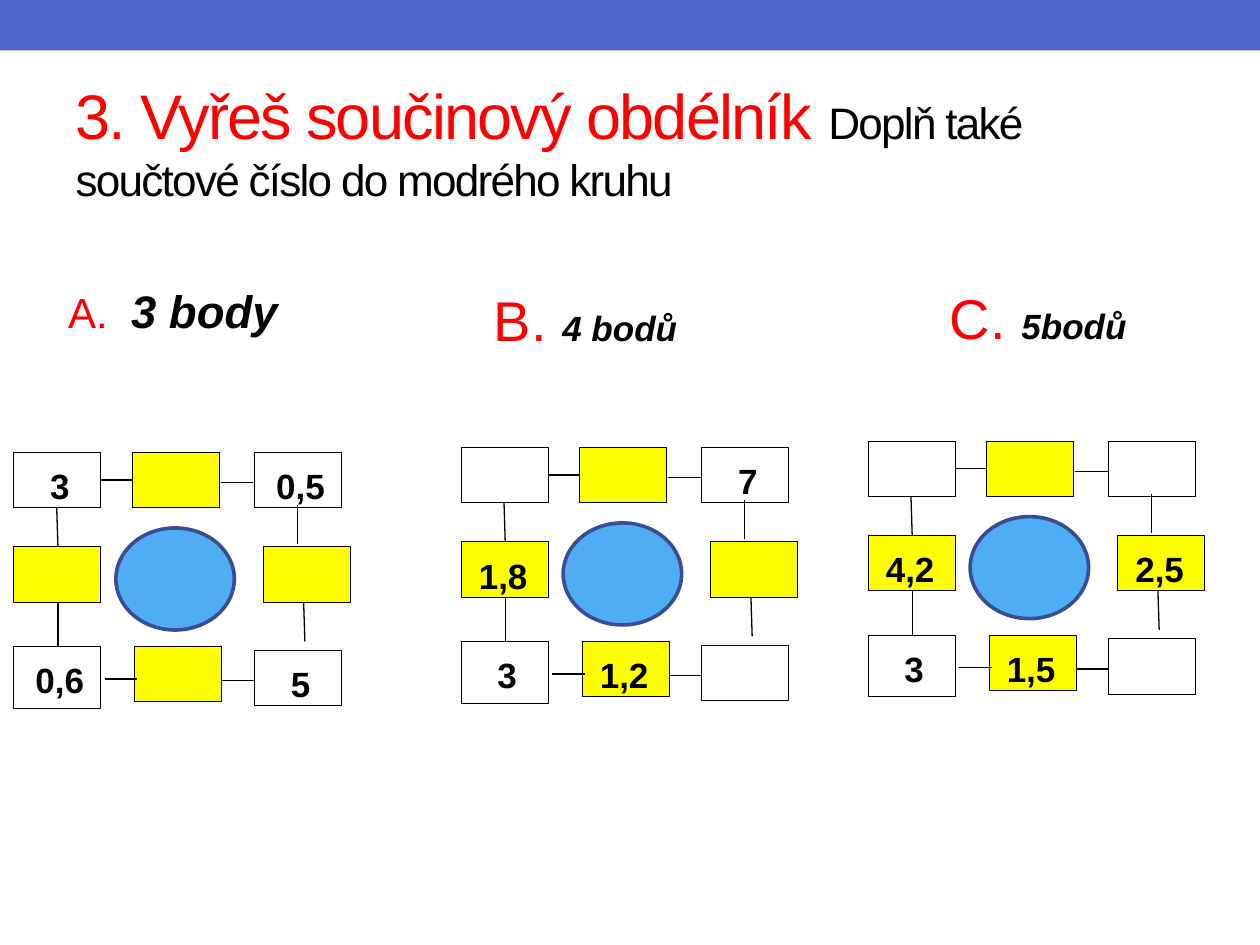
"""Build a worksheet slide with three product-rectangle puzzles."""
from lxml import etree
from pptx import Presentation
from pptx.dml.color import RGBColor
from pptx.enum.shapes import MSO_CONNECTOR, MSO_SHAPE
from pptx.enum.text import MSO_ANCHOR, MSO_AUTO_SIZE, PP_ALIGN
from pptx.oxml.ns import qn
from pptx.util import Inches, Pt

RECT, OVAL = MSO_SHAPE.RECTANGLE, MSO_SHAPE.OVAL
STRAIGHT = MSO_CONNECTOR.STRAIGHT
TOP, MIDDLE = MSO_ANCHOR.TOP, MSO_ANCHOR.MIDDLE
LEFT, CENTER = PP_ALIGN.LEFT, PP_ALIGN.CENTER
NO_FIT = MSO_AUTO_SIZE.NONE
BLACK, WHITE, RED, YELLOW = "000000", "FFFFFF", "FF0000", "FFFF00"
BAND, CIRCLE, CIRCLE_EDGE = "4E67C8", "4FADF3", "3A4C94"
COLUMNS, ROWS = 100, 75

CELL_WIDTH, CELL_HEIGHT = 6.9, 4.4
CELLS = {
    "top left": (0, 0, CELL_HEIGHT, WHITE),
    "top": (9.4, 0, CELL_HEIGHT, YELLOW),
    "right": (19.8, 7.5, CELL_HEIGHT, YELLOW),
    "top right": (19.1, 0, CELL_HEIGHT, WHITE),
    "bottom right": (19.1, 15.7, CELL_HEIGHT, WHITE),
    "left": (0, 7.5, CELL_HEIGHT, YELLOW),
    "bottom left": (0, 15.4, 4.9, WHITE),
    "bottom": (9.6, 15.4, CELL_HEIGHT, YELLOW),
}
LINKS = [
    (6.9, 2.2, 9.4, 2.2), (3.5, 15.4, 3.5, 11.9),
    (16.5, 18.1, 19.1, 18.1), (7.2, 18, 9.8, 18),
    (16.4, 2.4, 19, 2.4), (3.5, 7.5, 3.4, 4.4),
    (23.1, 15, 23, 11.9), (22.5, 7.3, 22.5, 4.2),
]
PUZZLES = [
    (1.1, 35.9, {"top left": "3", "top right": "0,5",
                 "bottom left": "0,6", "bottom right": "5"}),
    (36.6, 35.5, {"top right": "7", "left": "1,8",
                  "bottom left": "3", "bottom": "1,2"}),
    (68.9, 35, {"left": "4,2", "right": "2,5",
                "bottom left": "3", "bottom": "1,5"}),
]


def color(hex_code):
    """Turn a hex string into a colour."""
    return RGBColor.from_string(hex_code)


def assign(target, values):
    """Set each named attribute on the target."""
    for name, value in values.items():
        setattr(target, name, value)


class Worksheet:
    """Hold the style and the current slide, and draw on its grid."""

    font = "Arial"
    cell_paragraph = {"line_spacing": 1.15, "space_after": Pt(10)}
    label_frame = {"word_wrap": True, "auto_size": NO_FIT, "vertical_anchor": TOP}
    title_frame = {**label_frame, "vertical_anchor": MIDDLE}

    def __init__(self):
        """Open a deck with one titled slide."""
        self.deck = Presentation()
        assign(self.deck, {"slide_width": Inches(10), "slide_height": Inches(7.5)})
        self.slide = self.deck.slides.add_slide(self.deck.slide_layouts[1])
        self.layer = self.slide.shapes

    def place(self, *lengths):
        """Convert alternating columns and rows to slide lengths."""
        units = (self.deck.slide_width / COLUMNS, self.deck.slide_height / ROWS)
        return [round(length * units[i % 2]) for i, length in enumerate(lengths)]

    def add_text(self, paragraph, text, size, ink=BLACK, spacing=0, **emphasis):
        """Add one run in the house font."""
        run = paragraph.add_run()
        run.text = text
        assign(run.font, {"name": self.font, "size": Pt(size), **emphasis})
        run.font.color.rgb = color(ink)
        if spacing:
            run.font._element.set("spc", str(spacing))

    def title(self, box, heading, task):
        """Fill the title placeholder with a heading and its task."""
        holder = self.slide.shapes.title
        assign(holder, dict(zip(("left", "top", "width", "height"), self.place(*box))))
        assign(holder.text_frame, self.title_frame)
        paragraph = holder.text_frame.paragraphs[0]
        paragraph.alignment = LEFT
        self.add_text(paragraph, heading, 36, RED, spacing=-100)
        self.add_text(paragraph, task, 25.2, spacing=-100)

    def label(self, box, letter, points, sizes, holder=None):
        """Add a puzzle letter with its points."""
        area = self.place(*box)
        holder = holder or self.layer.add_textbox(*area)
        assign(holder, dict(zip(("left", "top", "width", "height"), area)))
        assign(holder.text_frame, self.label_frame)
        paragraph = holder.text_frame.paragraphs[0]
        assign(paragraph, {"alignment": LEFT, "space_before": Pt(3)})
        properties = paragraph._p.get_or_add_pPr()
        properties.set("marL", "0")
        properties.set("indent", "0")
        etree.SubElement(properties, qn("a:buNone"))
        self.add_text(paragraph, letter, sizes[0], RED, bold=False)
        self.add_text(paragraph, points, sizes[1], bold=True, italic=True)

    def shape(self, kind, box, fill, edge=None, weight=0.5):
        """Draw a flat preset shape."""
        shape = self.layer.add_shape(kind, *self.place(*box))
        shape.shadow.inherit = False
        shape.fill.solid()
        shape.fill.fore_color.rgb = color(fill)
        if edge:
            shape.line.color.rgb = color(edge)
            shape.line.width = Pt(weight)
        else:
            shape.line.fill.background()
        return shape

    def cell(self, box, fill, number):
        """Draw a puzzle cell, with its number if it is given."""
        frame = self.shape(RECT, box, fill, BLACK).text_frame
        centred = fill == WHITE
        assign(frame, {"margin_left": Inches(0.04 if centred else 0.14),
                       "margin_right": 0, "margin_top": Inches(0.05),
                       "margin_bottom": Inches(0.04), "vertical_anchor": TOP,
                       "word_wrap": True})
        if number:
            paragraph = frame.paragraphs[0]
            assign(paragraph, {**self.cell_paragraph,
                               "alignment": CENTER if centred else LEFT})
            self.add_text(paragraph, number, 20, bold=True)

    def link(self, *ends):
        """Draw a thin line between two cells."""
        line = self.layer.add_connector(STRAIGHT, *self.place(*ends))
        line.line.color.rgb = color(BLACK)
        line.line.width = Pt(0.75)
        etree.SubElement(line._element.spPr, qn("a:effectLst"))

    def puzzle(self, left, top, numbers):
        """Draw one grouped product rectangle around its sum circle."""
        self.layer = self.slide.shapes.add_group_shape().shapes
        for slot, (x, y, height, fill) in CELLS.items():
            self.cell((left + x, top + y, CELL_WIDTH, height), fill,
                      numbers.get(slot))
        for x1, y1, x2, y2 in LINKS:
            self.link(left + x1, top + y1, left + x2, top + y2)
        self.shape(OVAL, (left + 8.1, top + 6, 9.4, 8.1), CIRCLE, CIRCLE_EDGE, 2.08)
        self.layer = self.slide.shapes


def main():
    """Build and save the worksheet."""
    sheet = Worksheet()
    sheet.shape(RECT, (0, 0, COLUMNS, 4), BAND)
    sheet.title((5, 5.8, 90, 10.8), "3. Vyřeš součinový obdélník ",
                "Doplň také součtové číslo do modrého kruhu")
    sheet.label((4.4, 22, 21.8, 6.6), "A.  ", "3 body", (24, 26),
                sheet.slide.placeholders[1])
    sheet.label((74.4, 22, 19.3, 6.6), "C. ", "5bodů", (32, 20))
    sheet.label((38.2, 22.2, 17.8, 6.6), "B. ", "4 bodů", (32, 20))
    for left, top, numbers in PUZZLES:
        sheet.puzzle(left, top, numbers)
    sheet.deck.save("out.pptx")


if __name__ == "__main__":
    main()
